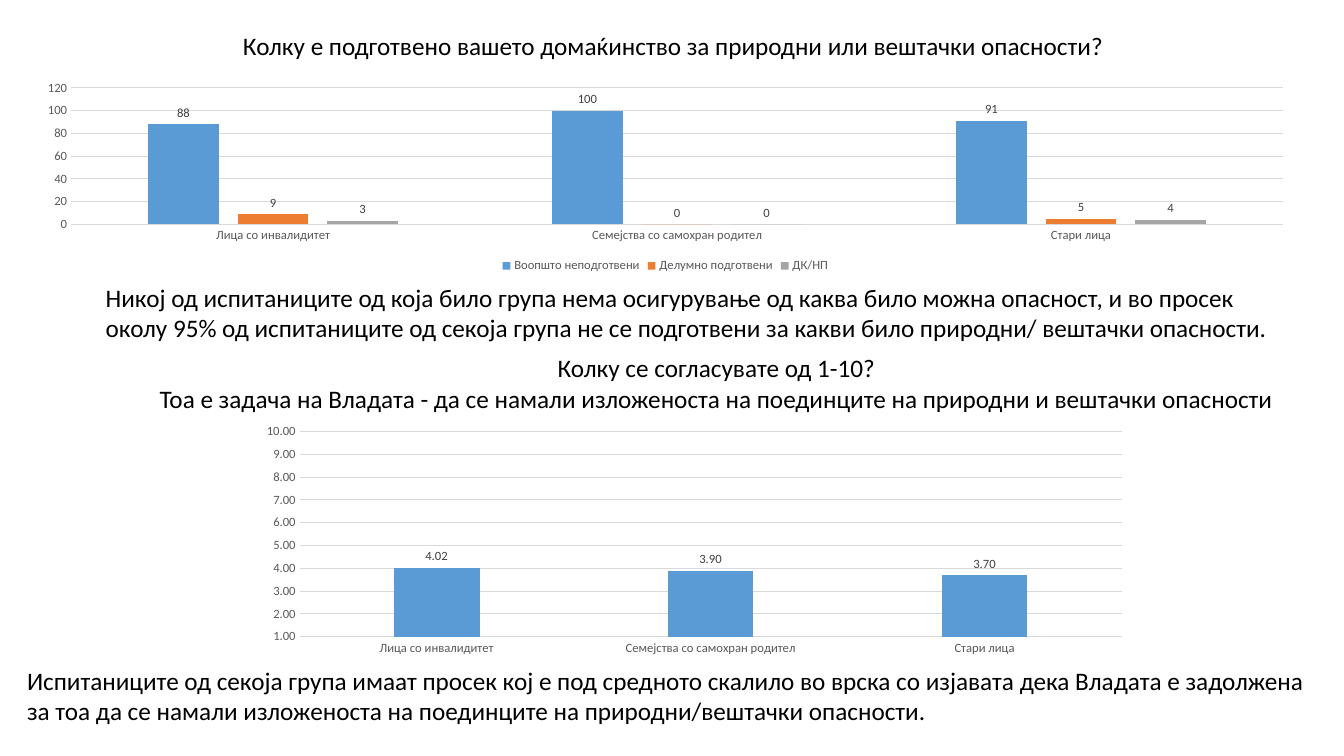
from pptx import Presentation
from pptx.chart.data import CategoryChartData
from pptx.dml.color import RGBColor
from pptx.enum.chart import XL_CHART_TYPE, XL_LABEL_POSITION, XL_LEGEND_POSITION, XL_TICK_MARK
from pptx.enum.text import MSO_ANCHOR, MSO_AUTO_SIZE, PP_ALIGN
from pptx.util import Inches, Pt

COLUMN = XL_CHART_TYPE.COLUMN_CLUSTERED
OUTSIDE = XL_LABEL_POSITION.OUTSIDE_END
BOTTOM = XL_LEGEND_POSITION.BOTTOM
NO_TICK = XL_TICK_MARK.NONE
TOP = MSO_ANCHOR.TOP
NO_FIT = MSO_AUTO_SIZE.NONE
LEFT, CENTER = PP_ALIGN.LEFT, PP_ALIGN.CENTER

FACE = "Calibri"
BLACK, GREY, DARK, PALE = "000000", "595959", "404040", "D9D9D9"
FILLS = ["5B9BD5", "ED7D31", "A5A5A5"]
GROUPS = ["Лица со инвалидитет", "Семејства со самохран родител", "Стари лица"]
READY = {
    "Воопшто неподготвени": [88, 100, 91],
    "Делумно подготвени": [9, 0, 5],
    "ДК/НП": [3, 0, 4],
}
AGREE = {"Series 1": [4.02, 3.9, 3.7]}


def paint(color, code):
    color.rgb = RGBColor.from_string(code)


def style(font, size, code):
    font.name = FACE
    font.size = Pt(size)
    paint(font.color, code)


def place(shape, box):
    shape.left, shape.top, shape.width, shape.height = map(Inches, box)


def write(shape, box, lines, align=LEFT):
    place(shape, box)
    frame = shape.text_frame
    frame.text = "\n".join(lines)
    frame.word_wrap = False
    frame.auto_size = NO_FIT
    frame.vertical_anchor = TOP
    for para in frame.paragraphs:
        para.alignment = align
        for run in para.runs:
            style(run.font, 18, BLACK)


def add_text(slide, box, lines, align=LEFT):
    write(slide.shapes.add_textbox(*map(Inches, box)), box, lines, align)


def rule(line):
    paint(line.color, PALE)
    line.width = Pt(0.75)


def style_axes(chart, fmt):
    base, scale = chart.category_axis, chart.value_axis
    for axis in (base, scale):
        axis.major_tick_mark = axis.minor_tick_mark = NO_TICK
        style(axis.tick_labels.font, 9, GREY)
    rule(base.format.line)
    scale.format.line.fill.background()
    scale.has_major_gridlines = True
    rule(scale.major_gridlines.format.line)
    scale.tick_labels.number_format = fmt
    scale.tick_labels.number_format_is_linked = False


def style_bars(plot, fmt):
    plot.gap_width, plot.overlap = 219, -27
    plot.vary_by_categories = False
    for series, code in zip(plot.series, FILLS):
        series.format.fill.solid()
        paint(series.format.fill.fore_color, code)
        series.invert_if_negative = False
        labels = series.data_labels
        labels.show_value = True
        labels.position = OUTSIDE
        labels.number_format = fmt
        labels.number_format_is_linked = False
        style(labels.font, 9, DARK)


def add_columns(slide, box, table, fmt):
    data = CategoryChartData(number_format=fmt)
    data.categories = GROUPS
    for name, values in table.items():
        data.add_series(name, values)
    chart = slide.shapes.add_chart(COLUMN, *map(Inches, box), data).chart
    chart.has_title = False
    style(chart.font, 10, BLACK)
    style_axes(chart, fmt)
    style_bars(chart.plots[0], fmt)
    chart.has_legend = len(table) > 1
    if chart.has_legend:
        chart.legend.position = BOTTOM
        chart.legend.include_in_layout = False
        style(chart.legend.font, 9, GREY)
    return chart


def main():
    deck = Presentation()
    deck.slide_width, deck.slide_height = Inches(13.33), Inches(7.5)
    slide = deck.slides.add_slide(deck.slide_layouts[5])
    write(slide.shapes.title, (2.31, 0.25, 8.83, 0.4), [
        "Колку е подготвено вашето домаќинство за природни или вештачки опасности?",
    ])
    add_columns(slide, (0.22, 0.76, 12.76, 1.99), READY, "0")
    add_text(slide, (0.95, 2.75, 11.86, 0.71), [
        "Никој од испитаниците од која било група нема осигурување од каква било можна опасност, и во просек",
        "околу 95% од испитаниците од секоја група не се подготвени за какви било природни/ вештачки опасности.",
    ])
    add_text(slide, (1.42, 3.45, 11.37, 0.71), [
        "Колку се согласувате од 1-10?",
        "Тоа е задача на Владата - да се намали изложеноста на поединците на природни и вештачки опасности",
    ], CENTER)
    scale = add_columns(slide, (2.47, 4.16, 8.83, 2.39), AGREE, "0.00").value_axis
    scale.minimum_scale, scale.maximum_scale = 1, 10
    scale.major_unit = 1
    add_text(slide, (0.17, 6.55, 12.89, 0.71), [
        "Испитаниците од секоја група имаат просек кој е под средното скалило во врска со изјавата дека Владата е задолжена",
        "за тоа да се намали изложеноста на поединците на природни/вештачки опасности.",
    ])
    deck.save("out.pptx")


if __name__ == "__main__":
    main()
